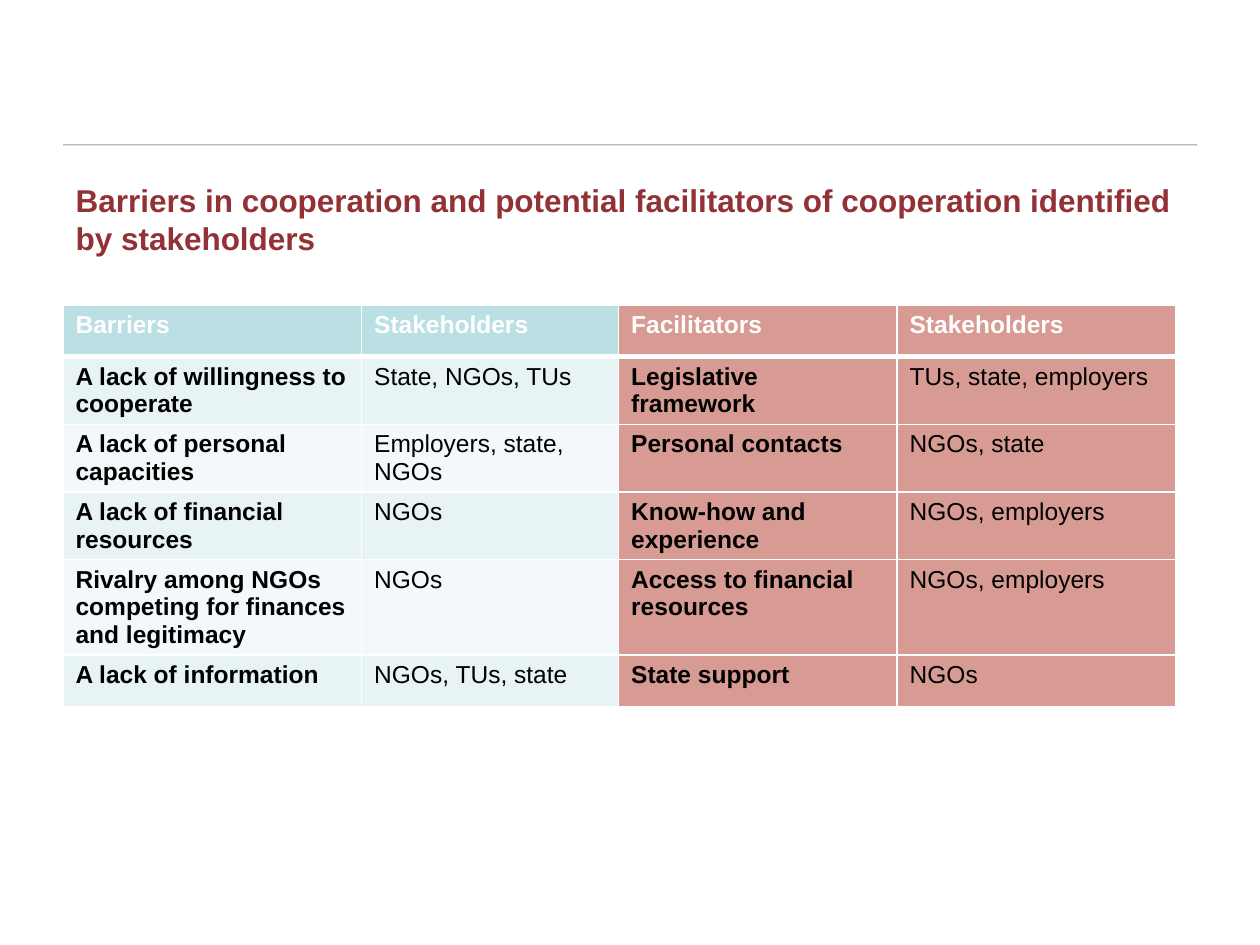
from dataclasses import dataclass

from lxml.etree import SubElement as Sub
from pptx import Presentation
from pptx.dml.color import RGBColor as RGB
from pptx.enum.shapes import MSO_CONNECTOR
from pptx.enum.text import MSO_AUTO_SIZE, MSO_ANCHOR
from pptx.oxml import parse_xml
from pptx.oxml.ns import nsdecls, qn
from pptx.util import Inches, Pt


@dataclass(frozen=True)
class Theme:
    font: str = "Arial"
    head: str = "923236"
    white: str = "FFFFFF"
    black: str = "000000"
    teal: str = "BBE0E3"
    bands: tuple = ("E7F3F4", "F3F9FA")
    rose: str = "D79B93"
    big: int = 18
    small: int = 14


theme = Theme()


def write(para, text, size, color, bold):
    run = para.add_run()
    run.text = text
    font = run.font
    font.name, font.size, font.bold = theme.font, Pt(size), bold
    font.color.rgb = RGB.from_string(color)


def border(cell, row):
    """Draw the four cell edges, with a heavy rule under the header row."""
    props = cell._tc.get_or_add_tcPr()
    for i, side in enumerate("LRTB"):
        heavy = (row, side) in ((0, "B"), (1, "T"))
        props.insert(i, parse_xml(
            f'<a:ln{side} {nsdecls("a")} w="{Pt(3 if heavy else 1)}"><a:solidFill>'
            f'<a:srgbClr val="{theme.white}"/></a:solidFill></a:ln{side}>'))


deck = Presentation()
deck.slide_width, deck.slide_height = Inches(10), Inches(7.5)
slide = deck.slides.add_slide(deck.slide_layouts[1])
title = slide.shapes.title
title.element.getparent().remove(title.element)

# Rule across the top
rule = slide.shapes.add_connector(
    MSO_CONNECTOR.STRAIGHT, Inches(0.5), Inches(1.15), Inches(9.5), Inches(1.15))
rule.line.width = Pt(0.5)
rule.line.color.rgb = RGB.from_string(theme.black)
tint = rule.element.spPr.find(".//" + qn("a:srgbClr"))
Sub(tint, qn("a:alpha"), val="40000")
Sub(rule.element.spPr, qn("a:effectLst"))

# Heading
body = slide.placeholders[1]
body.left, body.top = Inches(0.5), Inches(1.39)
body.width, body.height = Inches(9), Inches(5.31)
frame = body.text_frame
frame.word_wrap = True
frame.auto_size = MSO_AUTO_SIZE.NONE
frame.vertical_anchor = MSO_ANCHOR.TOP
para = frame.paragraphs[0]
props = para._p.get_or_add_pPr()
props.set("marL", "0")
props.set("indent", "0")
Sub(props, qn("a:buNone"))
para.space_before = Pt(0)
write(para, "Barriers in cooperation and potential facilitators of cooperation "
      "identified by stakeholders", theme.big, theme.head, True)

# Barriers and facilitators
rows = [
    ("Barriers", "Stakeholders", "Facilitators", "Stakeholders"),
    ("A lack of willingness to cooperate", "State, NGOs, TUs",
     "Legislative framework", "TUs, state, employers"),
    ("A lack of personal capacities", "Employers, state, NGOs",
     "Personal contacts", "NGOs, state"),
    ("A lack of financial resources", "NGOs",
     "Know-how and experience", "NGOs, employers"),
    ("Rivalry among NGOs competing for finances and legitimacy", "NGOs",
     "Access to financial resources", "NGOs, employers"),
    ("A lack of information", "NGOs, TUs, state", "State support", "NGOs"),
]
widths = (2.37, 2.04, 2.21, 2.21)
high = 0.41
table = slide.shapes.add_table(
    len(rows), len(widths), Inches(0.5), Inches(2.42),
    Inches(sum(widths)), Inches(high * len(rows))).table
for col, width in zip(table.columns, widths):
    col.width = Inches(width)
for r, texts in enumerate(rows):
    table.rows[r].height = Inches(high)
    left = theme.bands[(r - 1) % 2] if r else theme.teal
    for c, text in enumerate(texts):
        cell = table.cell(r, c)
        cell.fill.solid()
        cell.fill.fore_color.rgb = RGB.from_string(left if c < 2 else theme.rose)
        border(cell, r)
        write(cell.text_frame.paragraphs[0], text, theme.small,
              theme.black if r else theme.white, r == 0 or c % 2 == 0)

deck.save("out.pptx")
